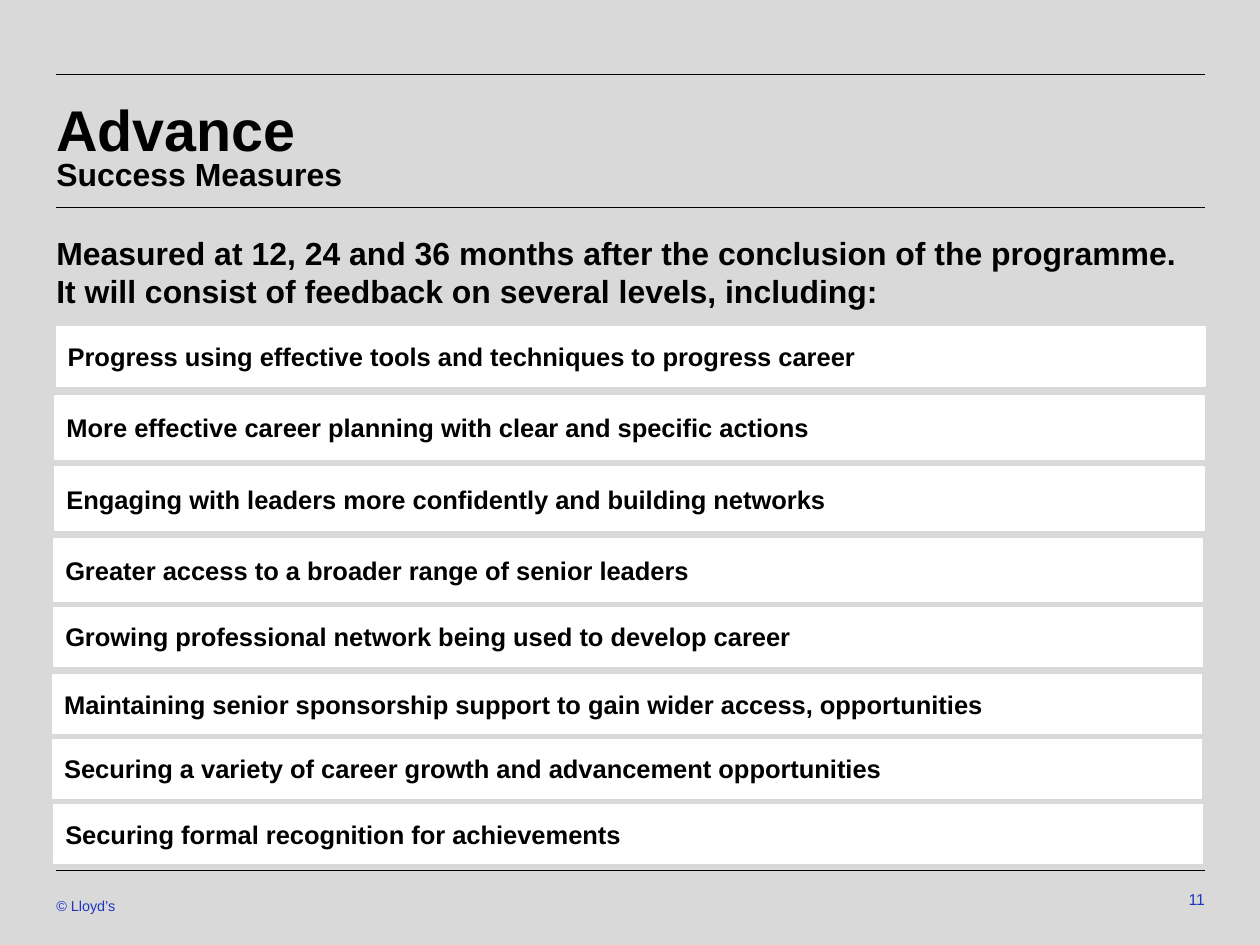
from lxml import etree
from pptx import Presentation
from pptx import util as u
from pptx.dml.color import RGBColor
from pptx.enum import shapes, text
from pptx.oxml.ns import qn

WIDTH, HEIGHT = u.Inches(10.97), u.Inches(8.23)
FONT = "Arial"
BLACK, WHITE, GREY, BLUE = "000000", "FFFFFF", "D9D9D9", "1E35BF"
MARGIN, CONTENT = 4.47, 91.16
RULES = (7.9, 21.99, 92.1)
LOW, TALL = 6.2, 6.68
MEASURES = (
    ("Progress using effective tools and techniques to progress career", 4.47, 34.63, LOW),
    ("More effective career planning with clear and specific actions", 4.38, 41.92, TALL),
    ("Engaging with leaders more confidently and building networks", 4.38, 49.45, TALL),
    ("Greater access to a broader range of senior leaders", 4.28, 56.99, TALL),
    ("Growing professional network being used to develop career", 4.28, 64.28, LOW),
    ("Maintaining senior sponsorship support to gain wider access, opportunities", 4.19, 71.45, LOW),
    ("Securing a variety of career growth and advancement opportunities", 4.19, 78.25, LOW),
    ("Securing formal recognition for achievements", 4.28, 85.18, LOW),
)


def color(value):
    return RGBColor.from_string(value)


def across(percent):
    return int(WIDTH * percent / 100)


def down(percent):
    return int(HEIGHT * percent / 100)


def area(left, top, width, height):
    return across(left), down(top), across(width), down(height)


def set_frame(shape, anchor, left=0, top=0, right=0, bottom=0):
    frame = shape.text_frame
    frame.word_wrap = True
    frame.auto_size = text.MSO_AUTO_SIZE.NONE
    frame.vertical_anchor = anchor
    frame.margin_left, frame.margin_right = u.Inches(left), u.Inches(right)
    frame.margin_top, frame.margin_bottom = u.Inches(top), u.Inches(bottom)


def write(shape, lines, size, fill=BLACK, bold=True, align=text.PP_ALIGN.LEFT):
    paragraph = shape.text_frame.paragraphs[0]
    paragraph.alignment = align
    paragraph.space_before = u.Pt(0)
    for index, line in enumerate(lines):
        if index:
            paragraph.add_line_break()
        run = paragraph.add_run()
        run.text = line
        run.font.name, run.font.size, run.font.bold = FONT, u.Pt(size), bold
        run.font.color.rgb = color(fill)
    return paragraph


def fill_placeholder(shape, lines, size, box, top=0, bottom=0):
    shape.left, shape.top, shape.width, shape.height = area(*box)
    set_frame(shape, text.MSO_ANCHOR.TOP, top=top, bottom=bottom)
    paragraph = write(shape, lines, size)
    properties = paragraph._p.get_or_add_pPr()
    properties.set("marL", "0")
    properties.set("indent", "0")
    etree.SubElement(properties, qn("a:buNone"))
    return paragraph


def add_rule(slide, top):
    rule = slide.shapes.add_connector(
        shapes.MSO_CONNECTOR.STRAIGHT,
        across(MARGIN), down(top), across(MARGIN + CONTENT), down(top))
    rule.line.color.rgb = color(BLACK)
    rule.line.width = u.Pt(0.5)
    etree.SubElement(rule._element.spPr, qn("a:effectLst"))


def add_label(slide, wording, size, box, align, inset):
    label = slide.shapes.add_textbox(*area(*box))
    set_frame(label, text.MSO_ANCHOR.MIDDLE, top=inset, bottom=inset)
    write(label, [wording], size, BLUE, False, align)


def add_measure(slide, wording, left, top, height):
    bar = slide.shapes.add_shape(
        shapes.MSO_SHAPE.RECTANGLE, *area(left, top, CONTENT, height))
    bar.shadow.inherit = False
    bar.fill.solid()
    bar.fill.fore_color.rgb = color(WHITE)
    bar.line.color.rgb = color(WHITE)
    bar.line.width = u.Pt(1)
    set_frame(bar, text.MSO_ANCHOR.MIDDLE, 0.1, 0.05, 0.1, 0.05)
    write(bar, [wording], 16)


def main():
    presentation = Presentation()
    presentation.slide_width, presentation.slide_height = WIDTH, HEIGHT
    slide = presentation.slides.add_slide(presentation.slide_layouts[3])
    slide.background.fill.solid()
    slide.background.fill.fore_color.rgb = color(GREY)

    title, introduction, subtitle = slide.placeholders
    heading = fill_placeholder(
        title, ["Advance"], 36, (MARGIN, 7.9, CONTENT, 14.22), 0.24, 0.08)
    heading.line_spacing = 0.9
    fill_placeholder(
        introduction,
        ["Measured at 12, 24 and 36 months after the conclusion of the programme.",
         "It will consist of feedback on several levels, including:"],
        20, (MARGIN, 24.67, CONTENT, 64.52))
    fill_placeholder(
        subtitle, ["Success Measures"], 20, (MARGIN, 15.92, CONTENT, 6.2), 0.04)

    for top in RULES:
        add_rule(slide, top)
    for measure in MEASURES:
        add_measure(slide, *measure)
    add_label(slide, "© Lloyd’s", 9, (MARGIN, 94.29, 33.73, 3.04),
              text.PP_ALIGN.LEFT, 0.05)
    add_label(slide, "11", 9.9, (73.11, 93.32, 22.52, 3.65),
              text.PP_ALIGN.RIGHT, 0.04)
    presentation.save("out.pptx")


if __name__ == "__main__":
    main()
